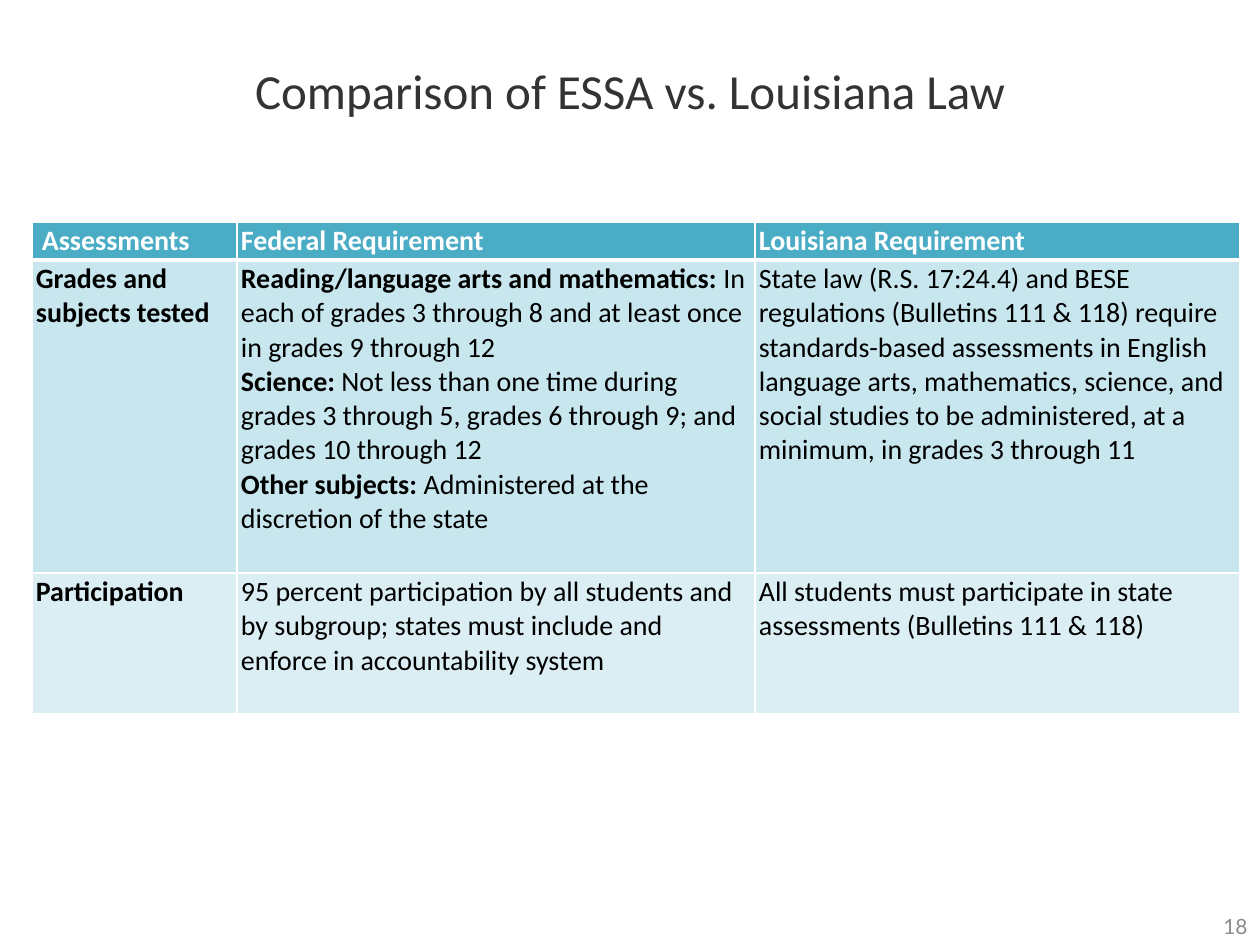
from lxml.etree import SubElement
from pptx import Presentation
from pptx.dml.color import RGBColor
from pptx.enum.text import MSO_ANCHOR, PP_ALIGN
from pptx.oxml.ns import qn
from pptx.util import Emu, Pt

PX_PER_INCH = 126
WHITE = RGBColor(0xFF, 0xFF, 0xFF)
BLACK = RGBColor(0x00, 0x00, 0x00)
TITLE_GRAY = RGBColor(0x33, 0x33, 0x33)
NUMBER_GRAY = RGBColor(0x8C, 0x8C, 0x8C)
HEADER_TEAL = RGBColor(0x4B, 0xAC, 0xC6)
ROW_FILLS = [HEADER_TEAL, RGBColor(0xC8, 0xE6, 0xEE), RGBColor(0xDB, 0xEE, 0xF4)]

COLUMN_WIDTHS = [205, 518, 485]
ROW_HEIGHTS = [38, 313, 141]

# Each cell is a list of paragraphs, each paragraph a (bold, regular) pair
REQUIREMENTS = [
    [
        [("Assessments", "")],
        [("Federal Requirement", "")],
        [("Louisiana Requirement", "")],
    ],
    [
        [("Grades and subjects tested", "")],
        [
            ("Reading/language arts and mathematics: ",
             "In each of grades 3 through 8 and at least once in grades 9 through 12"),
            ("Science: ",
             "Not less than one time during grades 3 through 5, grades 6 through 9; "
             "and grades 10 through 12"),
            ("Other subjects: ", "Administered at the discretion of the state"),
        ],
        [("", "State law (R.S. 17:24.4) and BESE regulations (Bulletins 111 & 118) "
              "require standards-based assessments in English language arts, "
              "mathematics, science, and social studies to be administered, at a "
              "minimum, in grades 3 through 11")],
    ],
    [
        [("Participation", "")],
        [("", "95 percent participation by all students and by subgroup; states must "
              "include and enforce in accountability system")],
        [("", "All students must participate in state assessments "
              "(Bulletins 111 & 118)")],
    ],
]


def px(length):
    return Emu(round(length * 914400 / PX_PER_INCH))


def set_font(paragraph, name, size, color):
    paragraph.font.name = name
    paragraph.font.size = Pt(size)
    paragraph.font.color.rgb = color


def add_text(slide, box, text, align, name, size, color):
    frame = slide.shapes.add_textbox(*map(px, box)).text_frame
    frame.word_wrap = True
    frame.vertical_anchor = MSO_ANCHOR.MIDDLE
    paragraph = frame.paragraphs[0]
    paragraph.text = text
    paragraph.alignment = align
    set_font(paragraph, name, size, color)


def set_borders(cell, bottom_width, top_width):
    widths = {"a:lnL": 1, "a:lnR": 1, "a:lnT": top_width, "a:lnB": bottom_width}
    properties = cell._tc.get_or_add_tcPr()
    for side, width in widths.items():
        line = SubElement(properties, qn(side), w=str(Pt(width)))
        fill = SubElement(line, qn("a:solidFill"))
        SubElement(fill, qn("a:srgbClr"), val=str(WHITE))


def fill_cell(cell, paragraphs, color):
    cell.margin_left = cell.margin_right = px(4)
    cell.margin_top = cell.margin_bottom = px(2)
    frame = cell.text_frame
    for index, parts in enumerate(paragraphs):
        paragraph = frame.add_paragraph() if index else frame.paragraphs[0]
        set_font(paragraph, "Calibri", 16, color)
        for text, bold in zip(parts, (True, False)):
            if text:
                run = paragraph.add_run()
                run.text = text
                run.font.bold = bold


def add_requirements_table(slide, left, top):
    table = slide.shapes.add_table(
        len(ROW_HEIGHTS), len(COLUMN_WIDTHS), px(left), px(top),
        px(sum(COLUMN_WIDTHS)), px(sum(ROW_HEIGHTS))).table
    table.first_row = table.horz_banding = False
    for column, width in zip(table.columns, COLUMN_WIDTHS):
        column.width = px(width)
    for r, (row, height) in enumerate(zip(table.rows, ROW_HEIGHTS)):
        row.height = px(height)
        for cell, paragraphs in zip(row.cells, REQUIREMENTS[r]):
            fill_cell(cell, paragraphs, BLACK if r else WHITE)
            set_borders(cell, bottom_width=1 if r else 3, top_width=3 if r == 1 else 1)
            cell.fill.solid()
            cell.fill.fore_color.rgb = ROW_FILLS[r]
    # The corner heading sits slightly further in
    table.cell(0, 0).margin_left = px(10)


def main():
    presentation = Presentation()
    presentation.slide_width = px(1260)
    presentation.slide_height = px(945)
    slide = presentation.slides.add_slide(presentation.slide_layouts[6])

    # Title
    add_text(slide, (0, 0, 1260, 179), "Comparison of ESSA vs. Louisiana Law",
             PP_ALIGN.CENTER, "Calibri", 28, TITLE_GRAY)
    # Comparison table
    add_requirements_table(slide, 32, 222)
    # Page number
    add_text(slide, (967, 903, 293, 47), "18",
             PP_ALIGN.RIGHT, "Lato", 12, NUMBER_GRAY)

    presentation.save("out.pptx")


if __name__ == "__main__":
    main()
